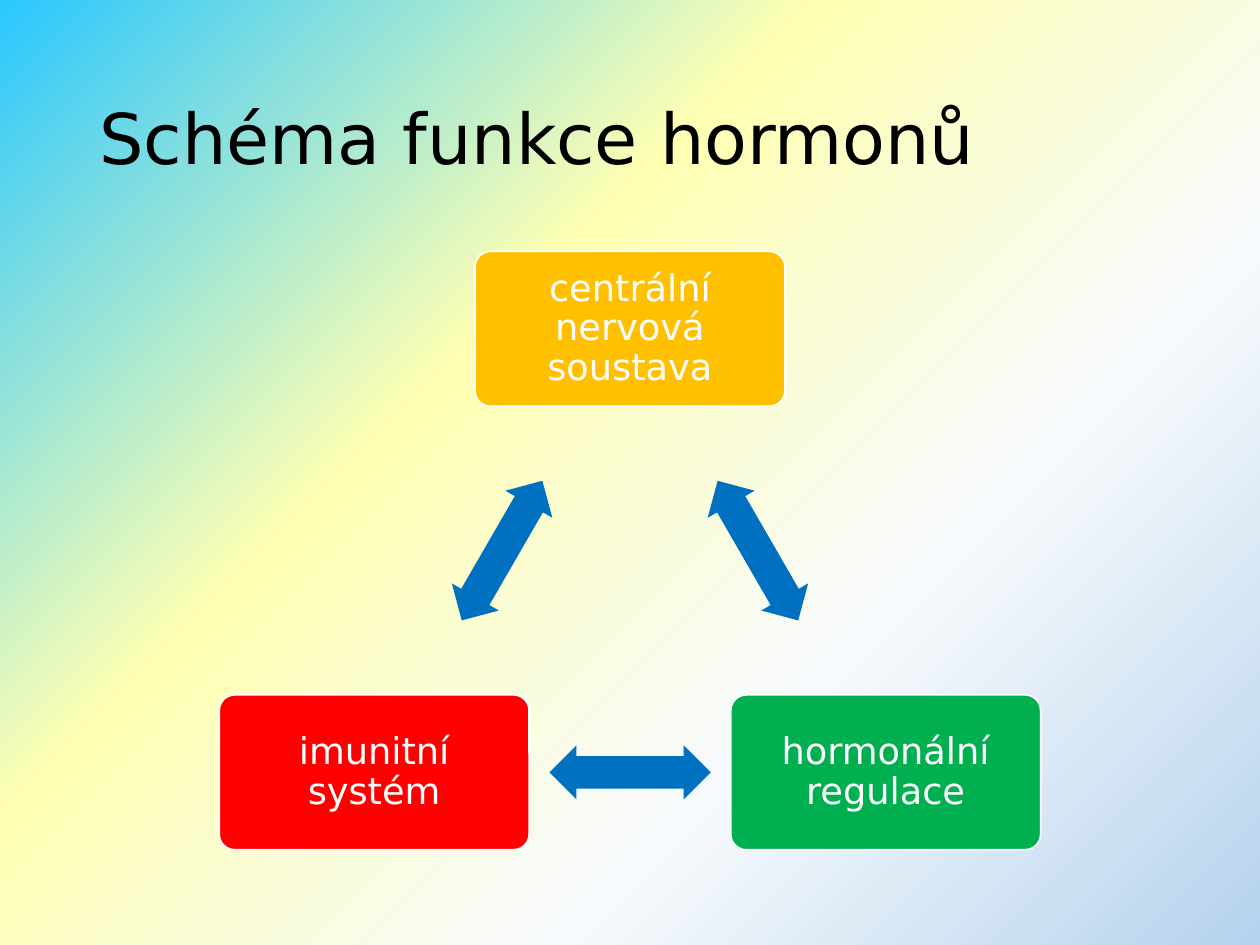
import math

from pptx import Presentation, util as u
from pptx.dml.color import RGBColor
from pptx.enum import shapes, text
from pptx.oxml import parse_xml
from pptx.oxml.ns import nsdecls, qn

FONT = "DejaVu Sans"
BOX_W, BOX_H = 2.46, 1.23
ARROW_W, ARROW_H = 1.28, 0.43
# Boxes clockwise from the top: label, fill, centre
BOXES = [
    ("centrální nervová soustava", "FFC000", (5, 2.61)),
    ("hormonální regulace", "00B050", (7.03, 6.13)),
    ("imunitní systém", "FF0000", (2.97, 6.13)),
]
# Background stops: position in %, colour, opacity in %
STOPS = [(0, "B5D2EC", 100), (32, "F7FAFD", 100),
         (63, "FFFFB3", 44), (100, "29C7FF", 100)]


def color(value):
    return RGBColor.from_string(value)


def set_background(s):
    s.background.fill.solid()
    bg = s.element.find(".//" + qn("p:bgPr"))
    stops = "".join(
        f'<a:gs pos="{pos * 1000}"><a:srgbClr val="{rgb}">'
        f'<a:alpha val="{alpha * 1000}"/></a:srgbClr></a:gs>'
        for pos, rgb, alpha in STOPS)
    grad = parse_xml(
        f'<a:gradFill {nsdecls("a")} rotWithShape="1"><a:gsLst>{stops}</a:gsLst>'
        '<a:path path="circle"><a:fillToRect l="100000" t="100000"/></a:path>'
        '</a:gradFill>')
    bg.replace(bg.find(qn("a:solidFill")), grad)


def write(tf, words, size, rgb, align):
    tf.word_wrap = True
    tf.auto_size = text.MSO_AUTO_SIZE.NONE
    tf.vertical_anchor = text.MSO_ANCHOR.MIDDLE
    p = tf.paragraphs[0]
    p.alignment = align
    p.line_spacing = 0.9
    r = p.add_run()
    r.text = words
    r.font.name = FONT
    r.font.size = u.Pt(size)
    r.font.color.rgb = color(rgb)


def add_title(s, words):
    sp = s.shapes.title
    sp.left, sp.top = u.Inches(0.69), u.Inches(0.4)
    sp.width, sp.height = u.Inches(8.62), u.Inches(1.45)
    write(sp.text_frame, words, 40, "000000", text.PP_ALIGN.LEFT)


def add_centred(s, kind, centre, w, h, rgb):
    x, y = centre
    sp = s.shapes.add_shape(kind, u.Inches(x - w / 2), u.Inches(y - h / 2),
                            u.Inches(w), u.Inches(h))
    sp.shadow.inherit = False
    sp.fill.solid()
    sp.fill.fore_color.rgb = color(rgb)
    return sp


def add_box(s, words, rgb, centre):
    sp = add_centred(s, shapes.MSO_SHAPE.ROUNDED_RECTANGLE, centre,
                     BOX_W, BOX_H, rgb)
    sp.adjustments[0] = 0.1
    sp.line.color.rgb = color("FFFFFF")
    sp.line.width = u.Pt(1)
    tf = sp.text_frame
    tf.margin_left = tf.margin_right = u.Inches(0.09)
    tf.margin_top = tf.margin_bottom = u.Inches(0.09)
    write(tf, words, 21, "FFFFFF", text.PP_ALIGN.CENTER)


def add_arrow(s, start, end):
    (x1, y1), (x2, y2) = start, end
    sp = add_centred(s, shapes.MSO_SHAPE.LEFT_RIGHT_ARROW,
                     ((x1 + x2) / 2, (y1 + y2) / 2), ARROW_W, ARROW_H, "0070C0")
    sp.adjustments[0], sp.adjustments[1] = 0.6, 0.5
    sp.line.fill.background()
    sp.rotation = round(math.degrees(math.atan2(y2 - y1, x2 - x1))) % 360


def main():
    prs = Presentation()
    prs.slide_width, prs.slide_height = u.Inches(10), u.Inches(7.5)
    s = prs.slides.add_slide(prs.slide_layouts[5])
    set_background(s)
    add_title(s, "Schéma funkce hormonů")

    # Cycle: each box, then the arrow to the next one
    for i, (words, rgb, centre) in enumerate(BOXES):
        add_box(s, words, rgb, centre)
        add_arrow(s, centre, BOXES[(i + 1) % len(BOXES)][2])

    prs.save("out.pptx")


if __name__ == "__main__":
    main()
